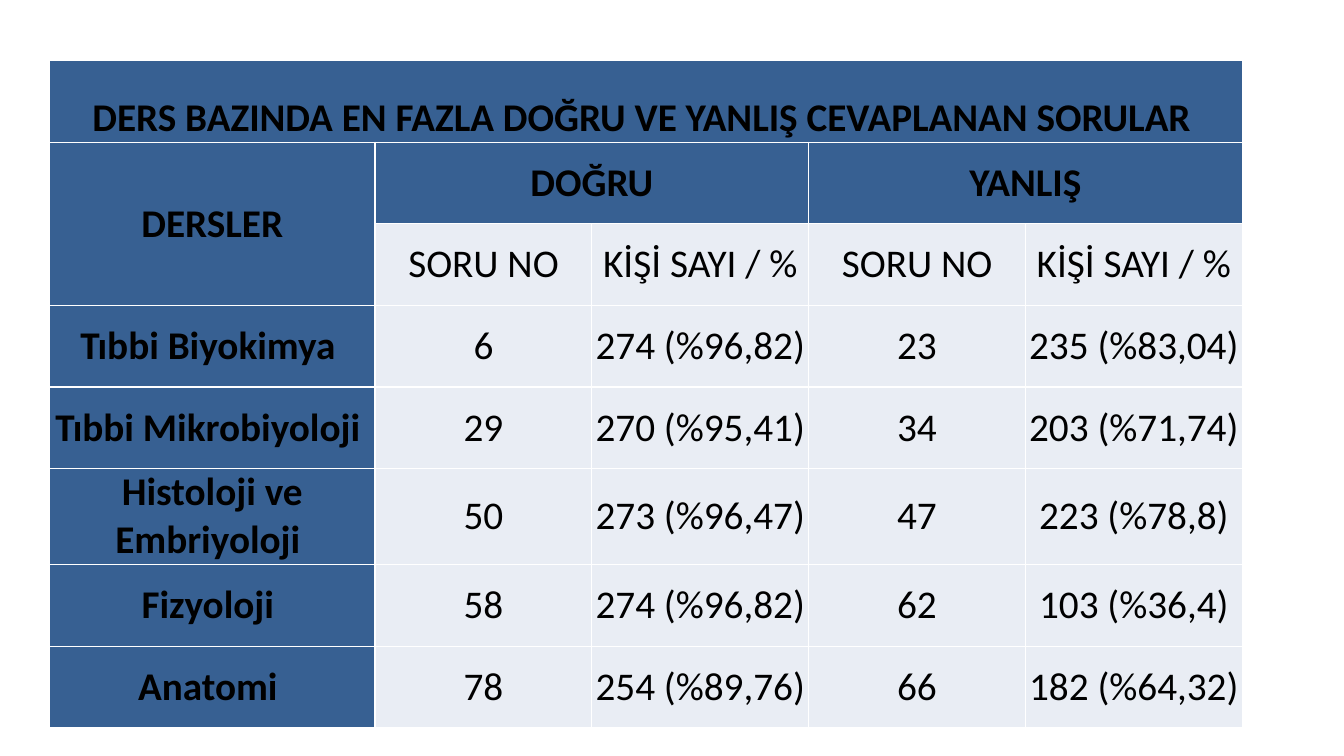
from lxml import etree
from pptx import Presentation
from pptx.dml.color import RGBColor
from pptx.enum.text import MSO_ANCHOR, PP_ALIGN
from pptx.oxml.ns import qn
from pptx.util import Inches, Pt

BLACK = RGBColor(0x00, 0x00, 0x00)
WHITE = RGBColor(0xFF, 0xFF, 0xFF)
HEADER_BLUE = RGBColor(0x37, 0x60, 0x92)
PALE_BLUE = RGBColor(0xE9, 0xED, 0xF4)
CENTER = PP_ALIGN.CENTER
MIDDLE, BOTTOM = MSO_ANCHOR.MIDDLE, MSO_ANCHOR.BOTTOM

LESSON_WIDTH = 3.23
TITLE = "DERS BAZINDA EN FAZLA DOĞRU VE YANLIŞ CEVAPLANAN SORULAR "
ROWS = [
    [TITLE, "", "", "", ""],
    ["DERSLER", "DOĞRU", "", "YANLIŞ", ""],
    ["", "SORU NO", "KİŞİ SAYI / %", "SORU NO", "KİŞİ SAYI / %"],
    ["Tıbbi Biyokimya ", "6", "274 (%96,82)", "23", "235 (%83,04)"],
    ["Tıbbi Mikrobiyoloji ", "29", "270 (%95,41)", "34", "203 (%71,74)"],
    ["Histoloji ve Embriyoloji ", "50", "273 (%96,47)", "47", "223 (%78,8)"],
    ["Fizyoloji ", "58", "274 (%96,82)", "62", "103 (%36,4)"],
    ["Anatomi ", "78", "254 (%89,76)", "66", "182 (%64,32)"],
]
# First and last (row, column) of each merged block
MERGES = [((0, 0), (0, 4)), ((1, 0), (2, 0)), ((1, 1), (1, 2)), ((1, 3), (1, 4))]


def add_borders(cell):
    tcPr = cell._tc.get_or_add_tcPr()
    for side in ("a:lnL", "a:lnR", "a:lnT", "a:lnB"):
        ln = etree.SubElement(tcPr, qn(side), w=str(Pt(1)))
        fill = etree.SubElement(ln, qn("a:solidFill"))
        etree.SubElement(fill, qn("a:srgbClr"), val=str(WHITE))


def format_cell(cell, text, is_header, anchor):
    add_borders(cell)
    cell.fill.solid()
    cell.fill.fore_color.rgb = HEADER_BLUE if is_header else PALE_BLUE
    cell.margin_left = cell.margin_right = 0
    cell.margin_top = cell.margin_bottom = 0
    cell.vertical_anchor = anchor
    if not text:
        return
    p = cell.text_frame.paragraphs[0]
    p.alignment = CENTER
    r = p.add_run()
    r.text = text
    r.font.name = "Calibri"
    r.font.size = Pt(28)
    r.font.bold = is_header
    r.font.color.rgb = BLACK


def add_answer_table(s, left, top, width, height):
    n_rows, n_cols = len(ROWS), len(ROWS[0])
    table = s.shapes.add_table(n_rows, n_cols, Inches(left), Inches(top),
                               Inches(width), Inches(height)).table
    answer_width = (width - LESSON_WIDTH) / (n_cols - 1)
    for j, column in enumerate(table.columns):
        column.width = Inches(answer_width if j else LESSON_WIDTH)
    for row in table.rows:
        row.height = Inches(height / n_rows)
    for first, last in MERGES:
        table.cell(*first).merge(table.cell(*last))
    for i, texts in enumerate(ROWS):
        for j, text in enumerate(texts):
            format_cell(table.cell(i, j), text, i < 2 or j == 0,
                        MIDDLE if i else BOTTOM)


def main():
    prs = Presentation()
    prs.slide_width, prs.slide_height = Inches(13.33), Inches(7.5)
    s = prs.slides.add_slide(prs.slide_layouts[6])
    add_answer_table(s, 0.49, 0.6, 11.83, 6.48)
    prs.save("out.pptx")


if __name__ == "__main__":
    main()
